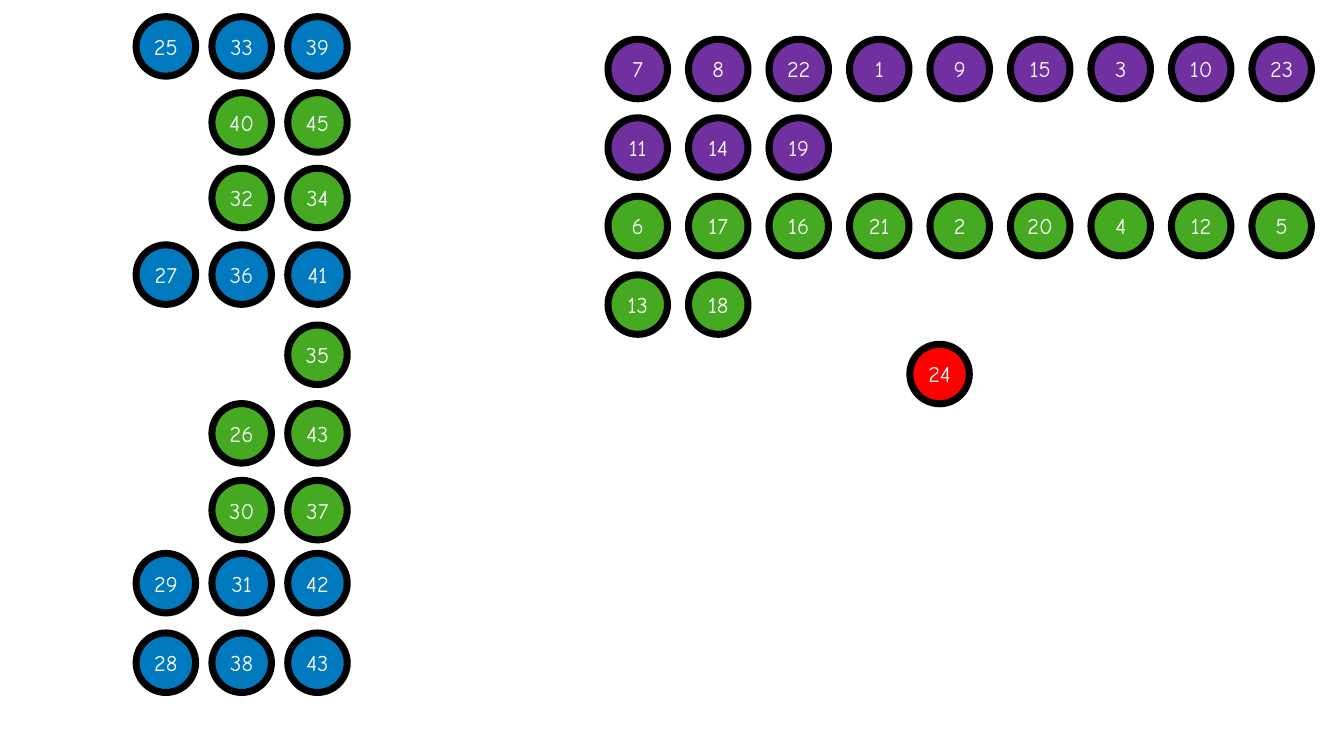
from dataclasses import dataclass

from pptx import Presentation
from pptx.dml.color import RGBColor as RGB
from pptx.enum.shapes import MSO_SHAPE as Shape
from pptx.enum.text import MSO_ANCHOR as Anchor
from pptx.enum.text import MSO_AUTO_SIZE as Fit
from pptx.enum.text import PP_ALIGN as Align
from pptx.util import Cm, Pt


@dataclass(frozen=True)
class Theme:
    blue: str = "0079BF"
    green: str = "45AA21"
    purple: str = "7030A0"
    red: str = "FF0000"
    edge: str = "000000"
    ink: str = "FFFFFF"
    font: str = "Comic Neue"
    size: int = 32
    rim: int = 10


@dataclass(frozen=True)
class Box:
    left: float
    top: float
    width: float
    height: float


THEME = Theme()
DISC = 3.0  # disc diameter, cm
INSET = 0.15

# Left block: top within the block, colour, numbers
STACK = [
    (0, THEME.blue, [25, 33, 39]),
    (3.83, THEME.green, [40, 45]),
    (7.64, THEME.green, [32, 34]),
    (11.5, THEME.blue, [27, 36, 41]),
    (15.54, THEME.green, [35]),
    (19.5, THEME.green, [26, 43]),
    (23.37, THEME.green, [30, 37]),
    (27.05, THEME.blue, [29, 31, 42]),
    (31.06, THEME.blue, [28, 38, 43]),
]

# Right block: evenly spaced rows
ROWS = [
    (THEME.purple, [7, 8, 22, 1, 9, 15, 3, 10, 23]),
    (THEME.purple, [11, 14, 19]),
    (THEME.green, [6, 17, 16, 21, 2, 20, 4, 12, 5]),
    (THEME.green, [13, 18]),
]


def write(frame, text, *, size, font, color, align):
    """Put one formatted line of text in a frame."""
    line = frame.paragraphs[0]
    line.alignment = align
    run = line.add_run()
    run.text = text
    run.font.size = Pt(size)
    run.font.name = font
    run.font.color.rgb = RGB.from_string(color)


def disc(slide, left, top, fill, num):
    """Draw one numbered disc."""
    ring = slide.shapes.add_shape(
        Shape.OVAL, Cm(left), Cm(top), Cm(DISC), Cm(DISC))
    ring.shadow.inherit = False
    ring.fill.solid()
    ring.fill.fore_color.rgb = RGB.from_string(fill)
    ring.line.color.rgb = RGB.from_string(THEME.edge)
    ring.line.width = Pt(THEME.rim)

    frame = ring.text_frame
    frame.margin_left = frame.margin_right = Cm(INSET)
    frame.margin_top = frame.margin_bottom = Cm(INSET)
    frame.vertical_anchor = Anchor.MIDDLE
    frame.word_wrap = True
    frame.auto_size = Fit.SHAPE_TO_FIT_TEXT
    write(frame, str(num), size=THEME.size, font=THEME.font,
          color=THEME.ink, align=Align.CENTER)


def stack(slide, box, cols=3):
    """Rows of discs set flush with the right side of the box."""
    step = (box.width - DISC) / (cols - 1)
    for top, fill, nums in STACK:
        first = cols - len(nums)
        for col, num in enumerate(nums, first):
            disc(slide, box.left + col * step, box.top + top, fill, num)


def grid(slide, box, cols=9):
    """Evenly spaced rows of discs starting at the left of the box."""
    across = (box.width - DISC) / (cols - 1)
    down = (box.height - DISC) / (len(ROWS) - 1)
    for row, (fill, nums) in enumerate(ROWS):
        for col, num in enumerate(nums):
            disc(slide, box.left + col * across, box.top + row * down,
                 fill, num)


def single(slide, box):
    """The lone red disc, centred in its box."""
    left = box.left + (box.width - DISC) / 2
    top = box.top + (box.height - DISC) / 2
    disc(slide, left, top, THEME.red, 24)


def main():
    deck = Presentation()
    deck.slide_width, deck.slide_height = Cm(67.73), Cm(38.1)
    slide = deck.slides.add_slide(deck.slide_layouts[6])

    stack(slide, Box(6.86, 0.84, 10.64, 34.06))
    grid(slide, Box(30.64, 1.98, 35.45, 14.87))
    single(slide, Box(45.85, 17.35, DISC, DISC))

    deck.save("out.pptx")


if __name__ == "__main__":
    main()
